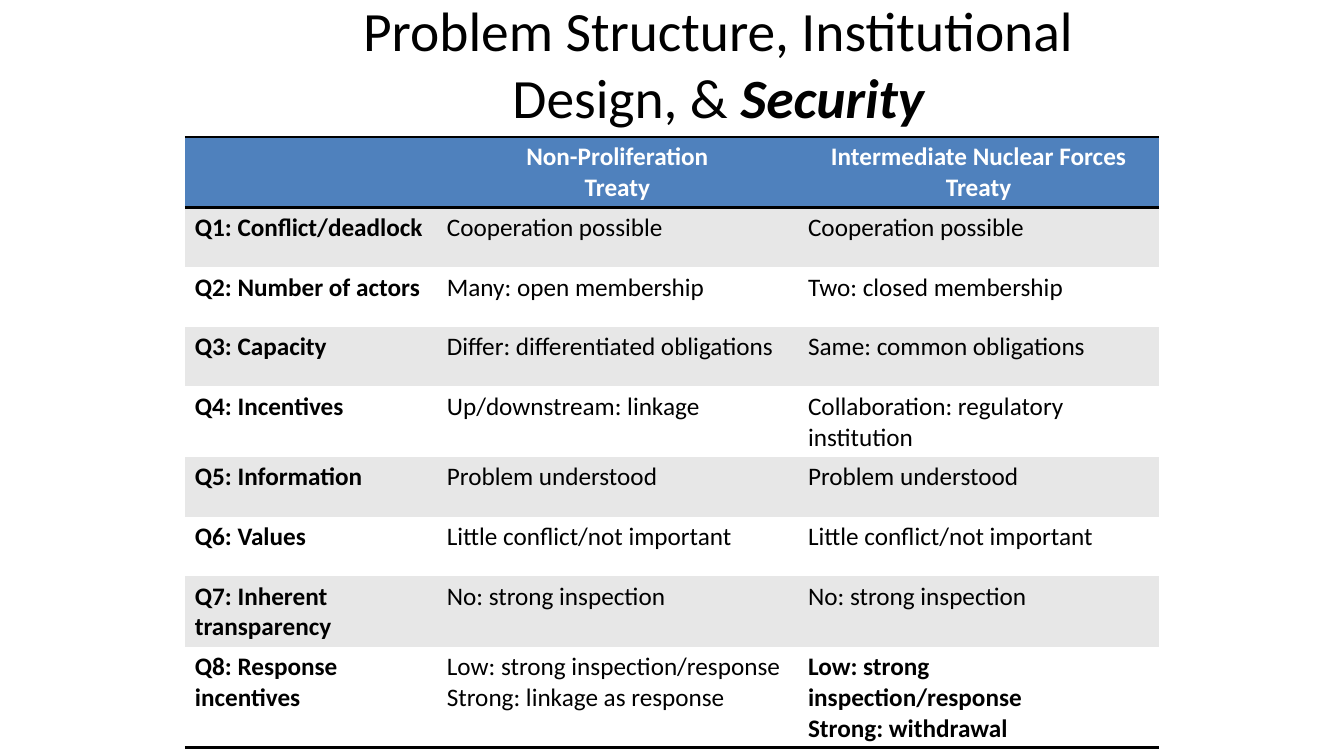
"""Build the slide comparing the institutional design of two security treaties."""
from dataclasses import dataclass

from lxml import etree
from pptx import Presentation
from pptx import util as u
from pptx.dml.color import RGBColor
from pptx.enum import text
from pptx.oxml.ns import qn


@dataclass(frozen=True)
class Theme:
    font: str = "Calibri"
    ink: str = "000000"
    header: str = "4F81BD"
    header_ink: str = "FFFFFF"
    bands: tuple = ("E7E7E7", "FFFFFF")
    title_size: float = 39.6
    table_size: float = 18
    rule_width: float = 2
    plain_table: str = "{2D5ABB26-0587-4C30-8999-92F81FD0307C}"


COLUMNS, ROWS = 160, 90
HEADINGS = ("", "Non-Proliferation\vTreaty", "Intermediate Nuclear Forces Treaty")
QUESTIONS = (
    ("Q1: Conflict/deadlock", "Cooperation possible", "Cooperation possible"),
    ("Q2: Number of actors", "Many: open membership", "Two: closed membership"),
    ("Q3: Capacity", "Differ: differentiated obligations", "Same: common obligations"),
    ("Q4: Incentives", "Up/downstream: linkage", "Collaboration: regulatory institution"),
    ("Q5: Information", "Problem understood", "Problem understood"),
    ("Q6: Values", "Little conflict/not important", "Little conflict/not important"),
    ("Q7: Inherent transparency", "No: strong inspection", "No: strong inspection"),
    ("Q8: Response incentives",
     "Low: strong inspection/response\nStrong: linkage as response",
     "Low: strong inspection/response\nStrong: withdrawal"),
)


class SlideBuilder:
    def __init__(self, presentation, theme):
        self.theme = theme
        self.slide = presentation.slides.add_slide(presentation.slide_layouts[6])
        self.column = presentation.slide_width / COLUMNS
        self.row = presentation.slide_height / ROWS

    def place(self, left, top, width, height):
        return (round(left * self.column), round(top * self.row),
                round(width * self.column), round(height * self.row))

    def style(self, paragraph, size, color, bold=None, centered=False):
        paragraph.alignment = text.PP_ALIGN.CENTER if centered else text.PP_ALIGN.LEFT
        font = paragraph.font
        font.name, font.size, font.bold = self.theme.font, u.Pt(size), bold
        font.color.rgb = RGBColor.from_string(color)

    def title(self, plain, emphasis, *grid):
        frame = self.slide.shapes.add_textbox(*self.place(*grid)).text_frame
        frame.word_wrap = True
        frame.vertical_anchor = text.MSO_ANCHOR.MIDDLE
        paragraph = frame.paragraphs[0]
        paragraph.add_run().text = plain
        strong = paragraph.add_run()
        strong.text = emphasis
        strong.font.bold = strong.font.italic = True
        self.style(paragraph, self.theme.title_size, self.theme.ink, centered=True)

    def rule(self, cell, side):
        properties = cell._tc.get_or_add_tcPr()
        line = etree.SubElement(properties, qn(f"a:ln{side}"), w=str(u.Pt(self.theme.rule_width)))
        fill = etree.SubElement(line, qn("a:solidFill"))
        etree.SubElement(fill, qn("a:srgbClr"), val=self.theme.ink)

    def cell(self, cell, content, fill, color, bold, centered, rules):
        for side in rules:
            self.rule(cell, side)
        cell.fill.solid()
        cell.fill.fore_color.rgb = RGBColor.from_string(fill)
        cell.text = content
        for paragraph in cell.text_frame.paragraphs:
            self.style(paragraph, self.theme.table_size, color, bold, centered)

    def table(self, headings, body, left, top, widths, height):
        theme = self.theme
        rows = (headings, *body)
        grid = self.place(left, top, sum(widths), height * len(rows))
        table = self.slide.shapes.add_table(len(rows), len(widths), *grid).table
        table._tbl.tblPr.find(qn("a:tableStyleId")).text = theme.plain_table
        table.horz_banding = False
        for column, width in zip(table.columns, widths):
            column.width = round(width * self.column)
        last = len(rows) - 1, len(widths) - 1
        for r, contents in enumerate(rows):
            table.rows[r].height = round(height * self.row)
            header = r == 0
            fill = theme.header if header else theme.bands[(r - 1) % 2]
            color = theme.header_ink if header else theme.ink
            rules = "TB" if header else "B" if r == last[0] else ""
            for c, content in enumerate(contents):
                bold = header or c == 0 or (r, c) == last
                self.cell(table.cell(r, c), content, fill, color, bold, header, rules)


def main():
    presentation = Presentation()
    presentation.slide_width, presentation.slide_height = u.Inches(13.33), u.Inches(7.5)
    builder = SlideBuilder(presentation, Theme())
    builder.title("Problem Structure, Institutional Design, & ", "Security", 37, 0, 97, 15)
    builder.table(HEADINGS, QUESTIONS, 22, 16.3, (30, 43, 43), 7.1)
    presentation.save("out.pptx")


if __name__ == "__main__":
    main()
